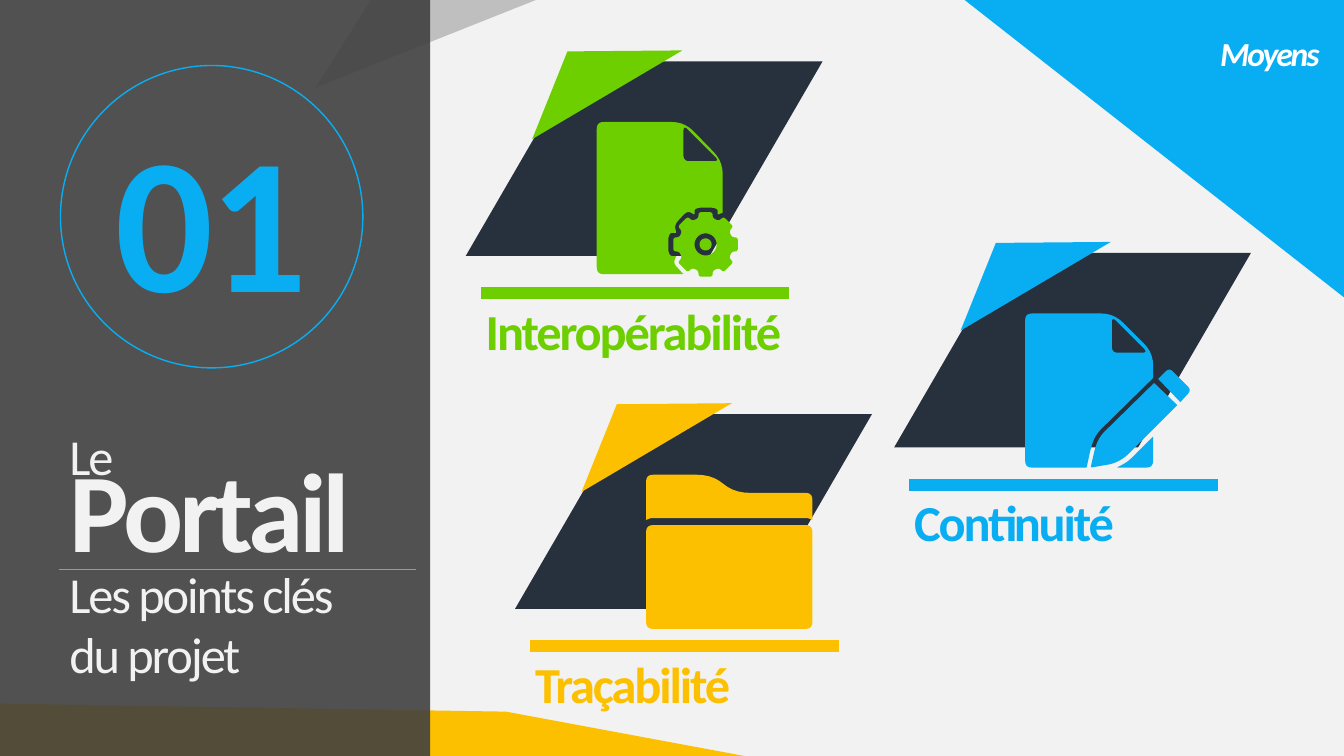
from math import cos, dist, pi, sin

from pptx import Presentation
from pptx.dml.color import RGBColor
from pptx.enum.shapes import MSO_CONNECTOR, MSO_SHAPE
from pptx.enum.text import MSO_ANCHOR, MSO_AUTO_SIZE, PP_ALIGN
from pptx.oxml.xmlchemy import OxmlElement
from pptx.util import Inches, Pt

RECT, OVAL = MSO_SHAPE.RECTANGLE, MSO_SHAPE.OVAL
SLANT, WEDGE = MSO_SHAPE.PARALLELOGRAM, MSO_SHAPE.RIGHT_TRIANGLE
BAR = MSO_SHAPE.FLOWCHART_PROCESS
LEFT, CENTER, RIGHT = PP_ALIGN.LEFT, PP_ALIGN.CENTER, PP_ALIGN.RIGHT
MIDDLE, TOP = MSO_ANCHOR.MIDDLE, MSO_ANCHOR.TOP

# Grid of 40 columns by 22.5 rows with square cells
WIDTH, HEIGHT = Inches(13.33), Inches(7.5)
COLS, ROWS = 40, 22.5
ICON = 0.03  # cells per icon unit

GREEN, BLUE, GOLD = "6DCF00", "09AEF2", "FCC000"
NAVY, PALE, WHITE = "27303D", "F2F2F2", "FFFFFF"
SILVER, DARK = "BFBFBF", "404040"


def color(code):
    return RGBColor.from_string(code)


def col(n):
    return round(n * WIDTH / COLS)


def row(n):
    return round(n * HEIGHT / ROWS)


def box(x, y, w, h):
    return col(x), row(y), col(w), row(h)


def paint(shape, fill=None, line=None):
    shape.shadow.inherit = False
    if fill:
        shape.fill.solid()
        shape.fill.fore_color.rgb = color(fill)
    else:
        shape.fill.background()
    if line:
        shape.line.color.rgb = color(line)
        shape.line.width = Pt(1)
    else:
        shape.line.fill.background()
    return shape


def block(shapes, kind, area, **look):
    return paint(shapes.add_shape(kind, *box(*area)), **look)


def outline(shapes, loops, fill, x=0, y=0, unit=1):
    """Draw closed loops of points as one filled shape."""
    build = None
    for loop in loops:
        pts = [(col(x + a * unit), row(y + b * unit)) for a, b in loop]
        if build is None:
            build = shapes.build_freeform(*pts[0], scale=1.0)
        else:
            build.move_to(*pts[0])
        build.add_line_segments(pts[1:], close=True)
    return paint(build.convert_to_shape(), fill)


def write(shape, text, size=36, ink=PALE, bold=False, italic=False,
          space=-1.5, align=LEFT, anchor=MIDDLE):
    frame = shape.text_frame
    frame.word_wrap = True
    frame.auto_size = MSO_AUTO_SIZE.NONE
    frame.vertical_anchor = anchor
    para = frame.paragraphs[0]
    para.text = text
    para.alignment = align
    for run in para.runs:
        font = run.font
        font.name, font.size = "Calibri", Pt(size)
        font.bold, font.italic = bold, italic
        font.color.rgb = color(ink)
        run._r.get_or_add_rPr().set("spc", str(round(space * 100)))


def label(shapes, text, area, **look):
    write(shapes.add_textbox(*box(*area)), text, **look)


def rule(shapes, x, y, end, ink):
    line = shapes.add_connector(MSO_CONNECTOR.STRAIGHT,
                                col(x), row(y), col(end), row(y))
    line.line.color.rgb = color(ink)
    line.line.width = Pt(0.5)
    line._element.spPr.append(OxmlElement("a:effectLst"))


# Icon outlines, in icon units
def soft(points, size, steps=5):
    """Round each corner; a third number in a point is its own size."""
    loop = []
    for i, (x, y, *own) in enumerate(points):
        cut = own[0] if own else size
        ends = []
        for near in (points[i - 1], points[(i + 1) % len(points)]):
            gap = dist((x, y), near[:2])
            part = min(cut / gap, 0.5)
            ends.append((x + (near[0] - x) * part, y + (near[1] - y) * part))
        (ax, ay), (bx, by) = ends
        for k in range(steps + 1):
            t = k / steps
            u = 1 - t
            loop.append((u * u * ax + 2 * u * t * x + t * t * bx,
                         u * u * ay + 2 * u * t * y + t * t * by))
    return loop


def ring(x, y, r, steps=32):
    turns = [2 * pi * k / steps for k in range(steps)]
    return [(x + r * cos(a), y + r * sin(a)) for a in turns]


def gear(x, y, teeth=8):
    tooth = [(-7, -26), (-7, -32), (7, -32), (7, -26)]
    turns = [2 * pi * k / teeth for k in range(teeth)]
    return [(x + a * cos(t) - b * sin(t), y + a * sin(t) + b * cos(t))
            for t in turns for a, b in tooth]


FOLD = soft([(86, 3), (122, 39), (86, 39)], 6)

GEARS = [
    soft([(0, 0, 7), (87, 0, 13), (125, 39, 13), (125, 90, 0), (120, 92),
          (120, 85, 8), (97, 85, 8), (97, 92), (90, 88, 6), (77, 102, 6),
          (79, 110), (71, 110, 8), (71, 133, 8), (79, 133), (76, 140, 4),
          (86, 151, 0), (0, 151, 7)], 1),
    FOLD, soft(gear(108, 121.5), 3), ring(108, 121.5, 11), ring(108, 121.5, 6)]

PENCIL = [
    soft([(0, 0, 7), (88, 0, 13), (127, 39, 13), (127, 64), (71, 119, 8),
          (66, 130, 8), (61, 153), (0, 153, 7)], 1),
    FOLD,
    soft([(91, 153), (127, 153, 7), (127, 122), (102, 147, 5)], 1),
    soft([(132, 65, 0), (143, 54), (165, 76), (154, 88, 0)], 5),
    soft([(128, 69, 0), (75, 121), (70, 131), (65, 153, 2), (88, 149),
          (99, 143), (151, 91, 0)], 6)]

FOLDER = [
    soft([(0, 45, 0), (0, 0), (66, 0, 16), (87, 18, 16), (165, 18),
          (165, 45, 0), (161, 43, 3), (4, 43, 3)], 7),
    soft([(0, 50), (165, 50), (165, 153), (0, 153)], 7)]

CARDS = [("Interopérabilité", 13.86, 1.83, GREEN, GEARS),
         ("Continuité", 26.61, 7.53, BLUE, PENCIL),
         ("Traçabilité", 15.33, 12.33, GOLD, FOLDER)]


def card(slide, name, x, y, ink, icon):
    parts = slide.shapes.add_group_shape().shapes
    base = block(parts, SLANT, (x, y, 10.62, 5.79), fill=NAVY)
    base.adjustments[0] = 0.58
    flap = [(3.03, -0.3), (1.98, 2.31), (6.45, -0.33)]
    outline(parts, [flap], ink, x, y)
    label(parts, name, (x + 0.3, y + 6.93, 9.63, 2.13), ink=ink, bold=True)
    block(parts, BAR, (x + 0.45, y + 6.72, 9.18, 0.36), fill=ink)
    outline(parts, icon, ink, x + 3.9, y + 1.8, ICON)


def scene(shapes):
    outline(shapes, [[(9.39, 2.61), (11.04, 0), (15.95, 0)]], SILVER)
    block(shapes, WEDGE, (28.71, 0, 11.29, 8.85), fill=BLUE).rotation = 180
    outline(shapes, [[(0, 20.94), (15.06, 21.18), (22.16, ROWS), (0, ROWS)]],
            GOLD)


def panel(slide):
    shapes = slide.shapes
    back = block(shapes, RECT, (0, 0, 12.8, ROWS), fill=DARK)
    alpha = OxmlElement("a:alpha")
    alpha.set("val", "90000")
    back.fill._xPr.solidFill[0].append(alpha)

    # Number in a circle
    parts = shapes.add_group_shape().shapes
    block(parts, OVAL, (1.8, 1.95, 9, 9), line=BLUE)
    label(parts, "01", (2.67, 2.79, 7.26, 7.26), size=138, ink=BLUE,
          bold=True, space=-3, align=CENTER)

    # Heading, raised above the panel
    label(shapes, "Le", (1.77, 12.48, 11.31, 2.13))
    title = shapes.title
    title.left, title.top, title.width, title.height = box(
        1.77, 12.93, 13.2, 4.35)
    write(title, "Portail", size=80, bold=True, space=-3)
    back._element.addnext(title._element)
    label(shapes, "Les points clés\vdu projet", (1.77, 16.59, 10.62, 3.93))
    rule(shapes, 1.77, 16.95, 12.39, GREEN)


def main():
    deck = Presentation()
    deck.slide_width, deck.slide_height = WIDTH, HEIGHT
    slide = deck.slides.add_slide(deck.slide_layouts[5])
    slide.background.fill.solid()
    slide.background.fill.fore_color.rgb = color(PALE)
    scene(slide.shapes)
    panel(slide)
    for item in CARDS:
        card(slide, *item)
    label(slide.shapes, "Moyens", (27.75, 0.84, 11.82, 1.5), size=24,
          ink=WHITE, bold=True, italic=True, align=RIGHT, anchor=TOP)
    deck.save("out.pptx")


if __name__ == "__main__":
    main()
